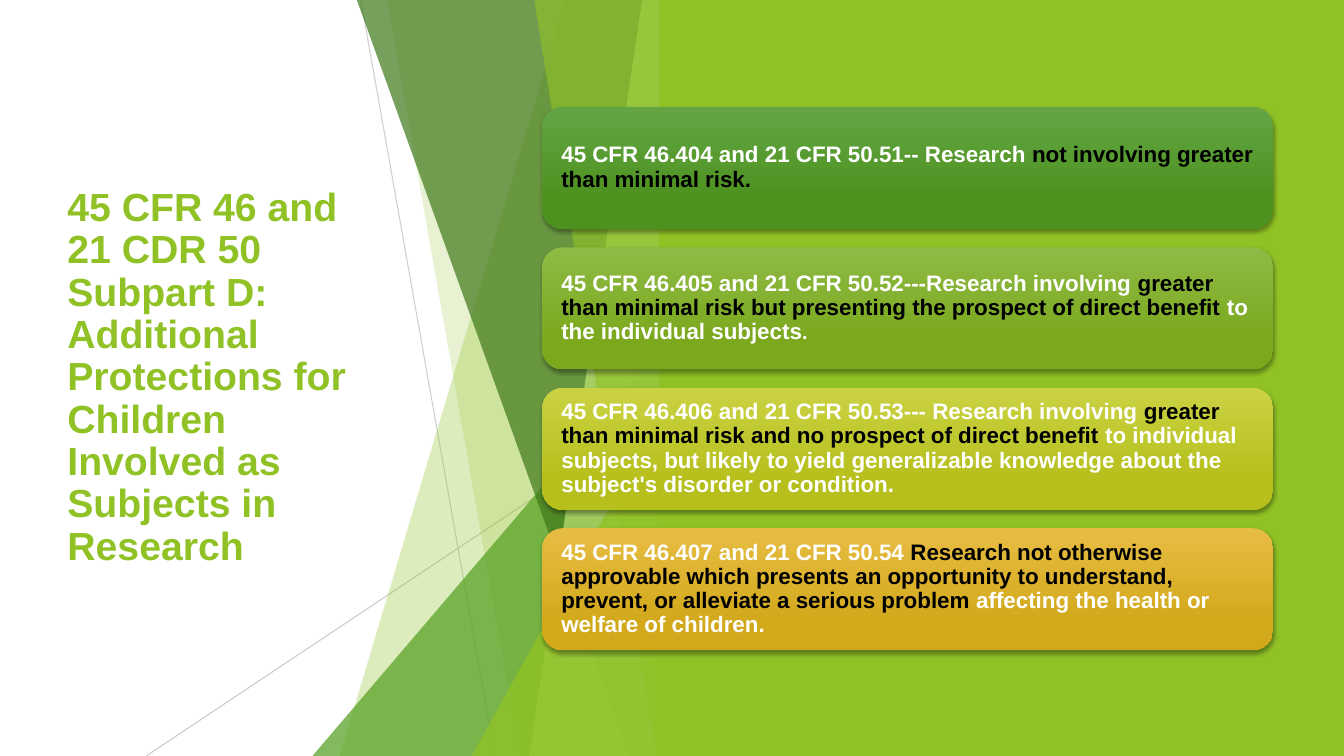
import lxml.etree
import pptx
import pptx.dml.color
import pptx.enum.shapes
import pptx.enum.text
import pptx.oxml.ns
import pptx.util

RGB = pptx.dml.color.RGBColor
SHAPE = pptx.enum.shapes.MSO_SHAPE
WHITE = RGB(0xFF, 0xFF, 0xFF)
BLACK = RGB(0x00, 0x00, 0x00)
GRAY = RGB(0xBF, 0xBF, 0xBF)
LIME = RGB(0x90, 0xC2, 0x26)
GREEN = RGB(0x54, 0xA0, 0x21)
DARK = RGB(0x3F, 0x78, 0x19)
PALE = RGB(0xC0, 0xE4, 0x74)

EDGE = 49.95  # right side of the facets, in columns
LINES = [((26.85, 0), (36.83, 100), 75), ((EDGE, 53.73), (10.88, 100), 80)]
# Facets, back to front: left end at the top, left end at the foot, colour, opacity.
# A facet whose first item is a pair is a triangle: (left, top), then colour, opacity.
FACETS = [
    (42.08, 25.28, LIME, 30),
    (28.8, 38.7, LIME, 20),
    ((23.25, 44.4), GREEN, 72),
    (26.55, 46.8, DARK, 70),
    (47.78, 39.38, PALE, 70),
    (39.75, 48.83, LIME, 65),
    ((35.1, 52.4), LIME, 80),
]

TITLE = [("45 CFR 46 and 21 CDR 50 Subpart D: \v"
          "Additional Protections for Children Involved as Subjects in Research",
          LIME, 28)]
# Cards: top colour, bottom colour, runs of text.
CARDS = [
    (RGB(0x63, 0xA5, 0x45), RGB(0x4D, 0x92, 0x1E), [
        ("45 CFR 46.404 and 21 CFR 50.51-- Research", WHITE, 16),
        (" not involving greater than minimal risk.", BLACK, 16)]),
    (RGB(0x8E, 0xBB, 0x44), RGB(0x7B, 0xA8, 0x1D), [
        ("45 CFR 46.405 and 21 CFR 50.52---Research involving ", WHITE, 16),
        ("greater than minimal risk but presenting the prospect of "
         "direct benefit ", BLACK, 16),
        ("to the individual subjects", WHITE, 16),
        (".", WHITE, 14)]),
    (RGB(0xCA, 0xD2, 0x43), RGB(0xB6, 0xBF, 0x1B), [
        ("45 CFR 46.406 and 21 CFR 50.53--- Research involving ", WHITE, 16),
        ("greater than minimal risk and no prospect of direct benefit ",
         BLACK, 16),
        ("to individual subjects, but likely to yield generalizable knowledge "
         "about the subject's disorder or condition.", WHITE, 16)]),
    (RGB(0xE7, 0xBC, 0x43), RGB(0xD2, 0xA9, 0x1B), [
        ("45 CFR 46.407 and 21 CFR 50.54 ", WHITE, 16),
        ("Research not otherwise approvable which presents an opportunity to "
         "understand, prevent, or alleviate a serious problem ", BLACK, 16),
        ("affecting the health or welfare of children.", WHITE, 16)]),
]


def put(item, values):
    for name, value in values.items():
        setattr(item, name, value)


def node(parent, tag, **attrs):
    return lxml.etree.SubElement(parent, pptx.oxml.ns.qn(tag), attrs)


def fade(fill, alpha):
    """Set the opacity, in percent, of a solid fill's colour element."""
    color = fill.find(".//" + pptx.oxml.ns.qn("a:srgbClr"))
    node(color, "a:alpha", val=str(alpha * 1000))


class Board:
    """A slide measured in a grid of 100 columns by 100 rows."""

    font = {"name": "Arial", "bold": True}

    def __init__(self, deck):
        self.col = deck.slide_width / 100
        self.row = deck.slide_height / 100
        self.shapes = deck.slides.add_slide(deck.slide_layouts[6]).shapes

    def spot(self, x, y):
        return round(x * self.col), round(y * self.row)

    def paint(self, shape, color, alpha=100):
        shape.shadow.inherit = False
        shape.fill.solid()
        shape.fill.fore_color.rgb = color
        shape.line.fill.background()
        if alpha < 100:
            fade(shape._element.spPr, alpha)

    def line(self, start, end, alpha):
        rule = self.shapes.add_connector(
            pptx.enum.shapes.MSO_CONNECTOR.STRAIGHT,
            *self.spot(*start), *self.spot(*end))
        rule.line.color.rgb = GRAY
        rule.line.width = pptx.util.Pt(0.75)
        fade(rule._element.spPr, alpha)
        node(rule._element.spPr, "a:effectLst")

    def block(self, kind, x, y, w, h):
        return self.shapes.add_shape(kind, *self.spot(x, y), *self.spot(w, h))

    def facet(self, top, foot, color, alpha):
        pen = self.shapes.build_freeform(*self.spot(top, 0))
        pen.add_line_segments(
            [self.spot(EDGE, 0), self.spot(EDGE, 100), self.spot(foot, 100)])
        self.paint(pen.convert_to_shape(), color, alpha)

    def wedge(self, corner, color, alpha):
        """Draw a triangle from its corner to the slide's foot, apex at EDGE."""
        x, y = corner
        shape = self.block(SHAPE.ISOSCELES_TRIANGLE, x, y, EDGE - x, 100 - y)
        shape.adjustments[0] = 1
        self.paint(shape, color, alpha)

    def text(self, shape, runs, pad):
        side, edge = pptx.util.Inches(pad[0]), pptx.util.Inches(pad[1])
        frame = shape.text_frame
        put(frame, {"word_wrap": True, "margin_left": side,
                    "margin_right": side, "margin_top": edge,
                    "margin_bottom": edge,
                    "vertical_anchor": pptx.enum.text.MSO_ANCHOR.MIDDLE})
        para = frame.paragraphs[0]
        put(para, {"line_spacing": 0.9,
                   "alignment": pptx.enum.text.PP_ALIGN.LEFT})
        for words, color, size in runs:
            for i, part in enumerate(words.split("\v")):
                if i:
                    para.add_line_break()
                run = para.add_run()
                run.text = part
                put(run.font, {**self.font, "size": pptx.util.Pt(size)})
                run.font.color.rgb = color

    def title(self, runs, x, y, w, h):
        box = self.shapes.add_textbox(*self.spot(x, y), *self.spot(w, h))
        self.text(box, runs, (0.1, 0.05))

    def card(self, x, y, w, h, top, foot, runs):
        shape = self.block(SHAPE.ROUNDED_RECTANGLE, x, y, w, h)
        shape.fill.gradient()
        shape.fill.gradient_angle = 270
        stops = shape.fill.gradient_stops
        for stop, place, color in zip(stops, (0, 0.78), (top, foot)):
            stop.color.rgb = color
            stop.position = place
        shape.line.fill.background()
        shape.shadow.inherit = False
        glow = shape._element.spPr.find(pptx.oxml.ns.qn("a:effectLst"))
        shade = node(glow, "a:outerShdw", blurRad=str(pptx.util.Pt(3)),
                     dist=str(pptx.util.Pt(2)), dir="5400000",
                     rotWithShape="0")
        tint = node(shade, "a:srgbClr", val=str(BLACK))
        node(tint, "a:alpha", val="35000")
        self.text(shape, runs, (0.13, 0.13))


def main():
    deck = pptx.Presentation()
    deck.slide_width = pptx.util.Inches(13.33)
    deck.slide_height = pptx.util.Inches(7.5)
    board = Board(deck)
    board.title(TITLE, 4.28, 20.13, 24.45, 59.73)
    for line in LINES:
        board.line(*line)
    for facet in FACETS:
        draw = board.wedge if isinstance(facet[0], tuple) else board.facet
        draw(*facet)
    panel = board.block(SHAPE.RECTANGLE, 49.05, 0, 50.95, 100)
    board.paint(panel, LIME)
    for i, card in enumerate(CARDS):
        board.card(40.35, 14.13 + i * 18.58, 54.38, 16.13, *card)
    deck.save("out.pptx")


if __name__ == "__main__":
    main()
